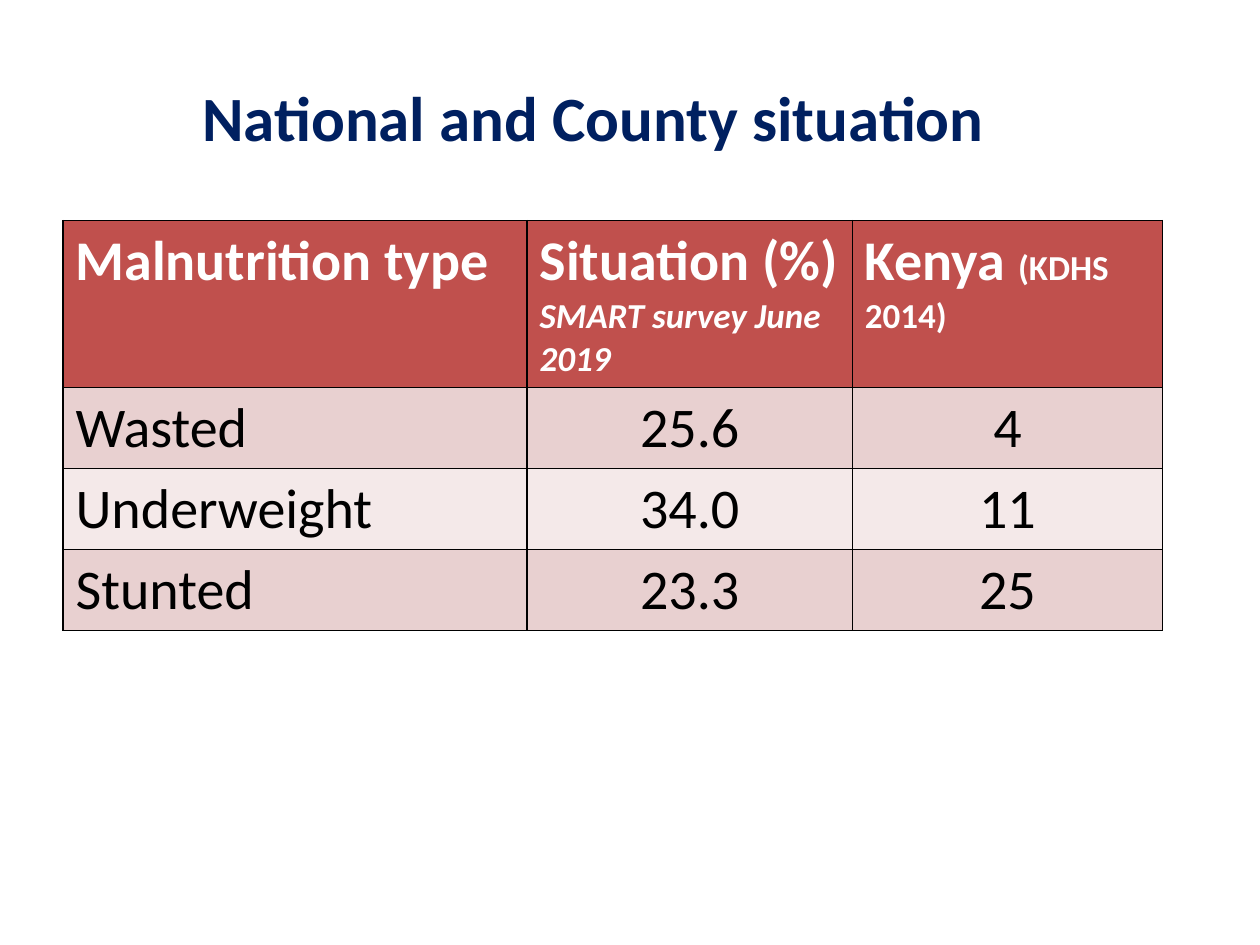
"""Build the slide on the national and county malnutrition situation."""
from dataclasses import dataclass

from lxml import etree
from pptx import Presentation
from pptx.dml.color import RGBColor
from pptx.enum.text import MSO_ANCHOR, PP_ALIGN
from pptx.oxml.ns import qn
from pptx.util import Pt

LEFT, CENTER = PP_ALIGN.LEFT, PP_ALIGN.CENTER
MIDDLE = MSO_ANCHOR.MIDDLE


@dataclass(frozen=True)
class Theme:
    font: str = "Calibri"
    navy: str = "002060"
    white: str = "FFFFFF"
    black: str = "000000"
    header: str = "C0504D"
    bands: tuple = ("E8D0D0", "F4E9E9")
    title: int = 36
    body: int = 32
    note: int = 20


THEME = Theme()
TITLE = "National and County situation"
HEADINGS = [
    [("Malnutrition type", {})],
    [("Situation (%) ", {}), ("SMART survey June 2019", {"size": THEME.note, "italic": True})],
    [("Kenya ", {}), ("(KDHS 2014)", {"size": THEME.note})],
]
ROWS = [("Wasted", "25.6", "4"), ("Underweight", "34.0", "11"), ("Stunted", "23.3", "25")]
COLUMN_WIDTHS = (265.2, 185.9, 177.3)
HEADER_HEIGHT, ROW_HEIGHT = 95.4, 46.3


def write(para, text, size=THEME.body, color=THEME.black, bold=False, italic=False, align=LEFT):
    para.alignment = align
    span = para.add_run()
    span.text = text
    font = span.font
    font.name, font.size, font.bold, font.italic = THEME.font, Pt(size), bold, italic
    font.color.rgb = RGBColor.from_string(color)


def style_cell(cell, fill):
    properties = cell._tc.get_or_add_tcPr()
    for side in ("a:lnL", "a:lnR", "a:lnT", "a:lnB"):
        line = etree.SubElement(properties, qn(side), w=str(Pt(1)))
        solid = etree.SubElement(line, qn("a:solidFill"))
        etree.SubElement(solid, qn("a:srgbClr"), val=THEME.black)
    cell.fill.solid()
    cell.fill.fore_color.rgb = RGBColor.from_string(fill)


def add_title(page):
    box = page.shapes.add_textbox(Pt(36), Pt(21.6), Pt(606.2), Pt(90))
    frame = box.text_frame
    frame.word_wrap = True
    frame.vertical_anchor = MIDDLE
    write(frame.paragraphs[0], TITLE, size=THEME.title, color=THEME.navy, bold=True, align=CENTER)


def add_situation_table(page):
    heights = [HEADER_HEIGHT] + [ROW_HEIGHT] * len(ROWS)
    table = page.shapes.add_table(
        len(heights), len(COLUMN_WIDTHS), Pt(36), Pt(126), Pt(sum(COLUMN_WIDTHS)), Pt(sum(heights))
    ).table
    for column, width in zip(table.columns, COLUMN_WIDTHS):
        column.width = Pt(width)
    for row, height in zip(table.rows, heights):
        row.height = Pt(height)
    for column, spans in enumerate(HEADINGS):
        cell = table.cell(0, column)
        style_cell(cell, THEME.header)
        for text, style in spans:
            write(cell.text_frame.paragraphs[0], text, color=THEME.white, bold=True, **style)
    for index, values in enumerate(ROWS):
        for column, text in enumerate(values):
            cell = table.cell(index + 1, column)
            style_cell(cell, THEME.bands[index % len(THEME.bands)])
            write(cell.text_frame.paragraphs[0], text, align=CENTER if column else LEFT)


def main():
    deck = Presentation()
    deck.slide_width, deck.slide_height = Pt(720), Pt(540)
    page = deck.slides.add_slide(deck.slide_layouts[6])
    add_title(page)
    add_situation_table(page)
    deck.save("out.pptx")


if __name__ == "__main__":
    main()
